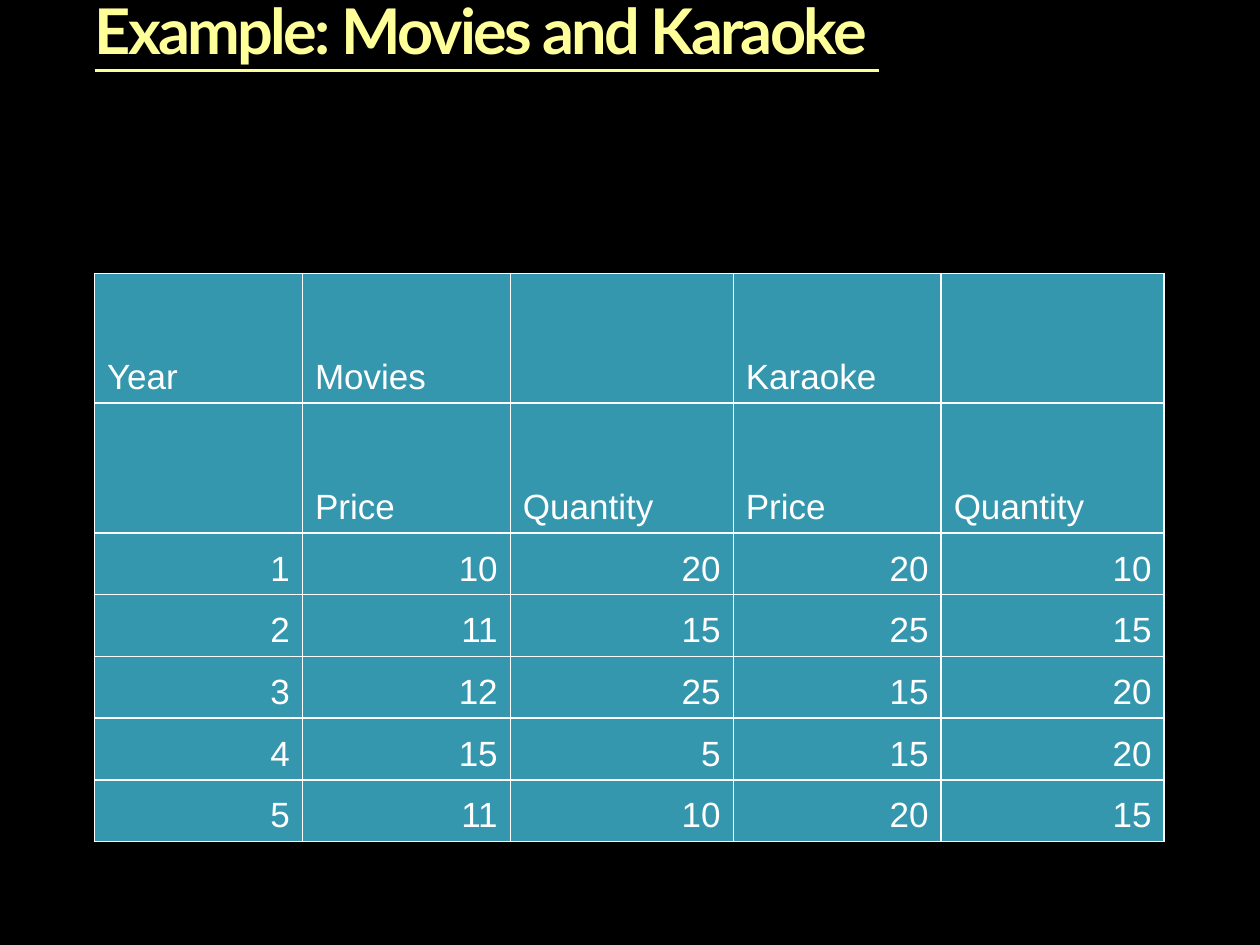
from lxml import etree
from pptx import Presentation
from pptx.dml.color import RGBColor
from pptx.enum import text
from pptx.oxml import ns
from pptx.util import Inches, Pt

ROWS = [
    ["Year", "Movies", "", "Karaoke", ""],
    ["", "Price", "Quantity", "Price", "Quantity"],
    [1, 10, 20, 20, 10],
    [2, 11, 15, 25, 15],
    [3, 12, 25, 15, 20],
    [4, 15, 5, 15, 20],
    [5, 11, 10, 20, 15],
]
WIDTHS = [1.65, 1.65, 1.77, 1.65, 1.77]
HEADS = 2


def paint(fill, color):
    fill.solid()
    fill.fore_color.rgb = RGBColor.from_string(color)


def style(font, name, size, color):
    font.name = name
    font.size = Pt(size)
    paint(font.fill, color)


def add_title(slide, box, words):
    title = slide.shapes.title
    title.left, title.top, title.width, title.height = map(Inches, box)
    frame = title.text_frame
    frame.text = words
    frame.word_wrap = True
    frame.auto_size = text.MSO_AUTO_SIZE.NONE
    frame.vertical_anchor = text.MSO_ANCHOR.TOP
    frame.margin_left = frame.margin_right = 0
    frame.margin_top = frame.margin_bottom = 0
    para = frame.paragraphs[0]
    para.alignment = text.PP_ALIGN.LEFT
    para.line_spacing = 0.9
    font = para.runs[0].font
    style(font, "Lato", 36, "FFFF99")
    font.bold = font.underline = True
    para.runs[0]._r.get_or_add_rPr().set("spc", "-150")


def add_edges(cell, color):
    props = cell._tc.get_or_add_tcPr()
    for spot, side in enumerate(("lnL", "lnR", "lnT", "lnB")):
        line = etree.Element(ns.qn("a:" + side), w=str(Pt(1)))
        fill = etree.SubElement(line, ns.qn("a:solidFill"))
        etree.SubElement(fill, ns.qn("a:srgbClr"), val=color)
        props.insert(spot, line)


def fill_cell(cell, value):
    paint(cell.fill, "3497AE")
    add_edges(cell, "FFFFFF")
    cell.vertical_anchor = text.MSO_ANCHOR.BOTTOM
    cell.text = str(value)
    para = cell.text_frame.paragraphs[0]
    if isinstance(value, int):
        para.alignment = text.PP_ALIGN.RIGHT
    for run in para.runs:
        style(run.font, "Arial", 20, "FFFFFF")


def add_grid(slide, box, rows):
    frame = slide.shapes.add_table(len(rows), len(WIDTHS), *map(Inches, box))
    table = frame.table
    table.first_row = table.horz_banding = False
    for col, width in zip(table.columns, WIDTHS):
        col.width = Inches(width)
    for num, (row, values) in enumerate(zip(table.rows, rows)):
        row.height = Inches(1.03 if num < HEADS else 0.49)
        for cell, value in zip(row.cells, values):
            fill_cell(cell, value)


def main():
    deck = Presentation()
    deck.slide_width, deck.slide_height = Inches(10), Inches(7.5)
    slide = deck.slides.add_slide(deck.slide_layouts[5])
    paint(slide.background.fill, "000000")
    add_title(slide, (0.75, 0, 8.5, 1.25), "Example: Movies and Karaoke ")
    add_grid(slide, (0.75, 2.17, 8.5, 4.5), ROWS)
    deck.save("out.pptx")


if __name__ == "__main__":
    main()
